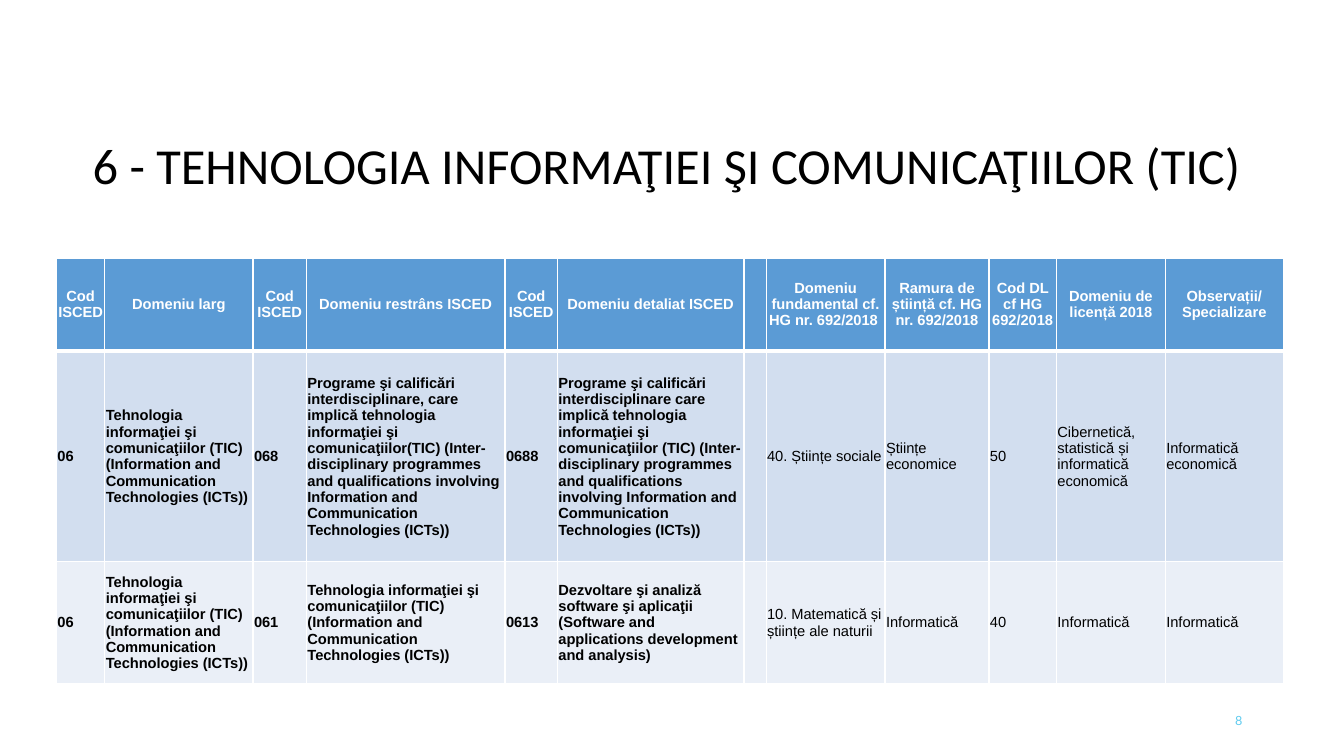
from lxml.etree import SubElement
from pptx import Presentation
from pptx.dml.color import RGBColor
from pptx.enum.text import MSO_ANCHOR as Anchor, PP_ALIGN as Align
from pptx.oxml.ns import qn
from pptx.util import Inches, Pt

TITLE = "6 - TEHNOLOGIA INFORMAŢIEI ŞI COMUNICAŢIILOR (TIC)"
PAGE_NUMBER = "8"
ICT = ("Tehnologia informaţiei şi comunicaţiilor (TIC) "
       "(Information and Communication Technologies (ICTs))")
INTERDISCIPLINARY = ("(Inter-disciplinary programmes and qualifications involving "
                     "Information and Communication Technologies (ICTs))")
HEADINGS = [
    "Cod ISCED", "Domeniu larg", "Cod ISCED", "Domeniu restrâns ISCED",
    "Cod ISCED", "Domeniu detaliat ISCED", "",
    "Domeniu fundamental cf. HG nr. 692/2018 ",
    "Ramura de știință cf. HG nr. 692/2018", "Cod DL cf HG 692/2018",
    "Domeniu de licență 2018", "Observații/ Specializare",
]
PROGRAMMES = [
    ["06", ICT, "068",
     "Programe şi calificări interdisciplinare, care implică tehnologia "
     "informaţiei şi comunicaţiilor(TIC) " + INTERDISCIPLINARY,
     "0688",
     "Programe şi calificări interdisciplinare care implică tehnologia "
     "informaţiei şi comunicaţiilor (TIC) " + INTERDISCIPLINARY,
     "", "40. Științe sociale", "Științe economice", "50",
     "Cibernetică, statistică și informatică economică", "Informatică economică"],
    ["06", ICT, "061", ICT, "0613",
     "Dezvoltare şi analiză software şi aplicaţii "
     "(Software and applications development and analysis)",
     "", "10. Matematică și științe ale naturii", "Informatică", "40",
     "Informatică", "Informatică"],
]
COLUMNS = [0.48, 1.47, 0.53, 1.97, 0.52, 1.85, 0.22, 1.18, 1.03, 0.67, 1.08, 1.17]
ROWS = [0.92, 2.09, 1.21]
DIVIDER = COLUMNS.index(min(COLUMNS))
COLORS = {"black": "000000", "white": "FFFFFF", "header": "5B9BD5",
          "odd": "D2DEEF", "even": "EAEFF7", "number": "5FCBEF"}


def write(frame, text, size, font, color, bold=False, align=Align.LEFT, spacing=None):
    frame.word_wrap = True
    paragraph = frame.paragraphs[0]
    paragraph.alignment = align
    if spacing:
        paragraph.line_spacing = spacing
    run = paragraph.add_run()
    run.text = text
    run.font.size = Pt(size)
    run.font.name = font
    run.font.bold = bold
    run.font.color.rgb = RGBColor.from_string(COLORS[color])


def add_label(slide, left, top, width, height, text, **style):
    frame = slide.shapes.add_textbox(*map(Inches, (left, top, width, height))).text_frame
    frame.vertical_anchor = Anchor.MIDDLE
    write(frame, text, **style)


def set_borders(cell, **widths):
    properties = cell._tc.get_or_add_tcPr()
    for side in "LRTB":
        line = SubElement(properties, qn(f"a:ln{side}"), w=str(Pt(widths.get(side, 1))))
        fill = SubElement(line, qn("a:solidFill"))
        SubElement(fill, qn("a:srgbClr"), val=COLORS["white"])


def fill_cell(cell, row, column, text):
    heading = row == 0
    set_borders(cell, T=3 if row == 1 else 1, B=3 if heading else 1)
    cell.fill.solid()
    cell.fill.fore_color.rgb = RGBColor.from_string(COLORS[("header", "odd", "even")[row]])
    cell.vertical_anchor = Anchor.MIDDLE
    inset = Inches(0 if heading else 0.01)
    cell.margin_left = cell.margin_right = cell.margin_top = inset
    cell.margin_bottom = 0
    if text:
        write(cell.text_frame, text, size=10.5, font="Arial",
              color="white" if heading else "black",
              bold=heading or column < DIVIDER,
              align=Align.CENTER if heading else Align.LEFT)


def main():
    deck = Presentation()
    deck.slide_width, deck.slide_height = Inches(13.33), Inches(7.5)
    slide = deck.slides.add_slide(deck.slide_layouts[6])

    add_label(slide, 0.82, 1.31, 11.91, 0.72, TITLE,
              size=36, font="Calibri", color="black", spacing=0.9)

    table = slide.shapes.add_table(
        len(ROWS), len(COLUMNS), Inches(0.56), Inches(2.56),
        Inches(sum(COLUMNS)), Inches(sum(ROWS))).table
    for column, width in zip(table.columns, COLUMNS):
        column.width = Inches(width)
    for row, height in zip(table.rows, ROWS):
        row.height = Inches(height)
    for r, entries in enumerate([HEADINGS] + PROGRAMMES):
        for c, text in enumerate(entries):
            fill_cell(table.cell(r, c), r, c, text)

    add_label(slide, 9.42, 6.95, 3, 0.4, PAGE_NUMBER,
              size=9, font="Lato", color="number", align=Align.RIGHT)
    deck.save("out.pptx")


if __name__ == "__main__":
    main()
